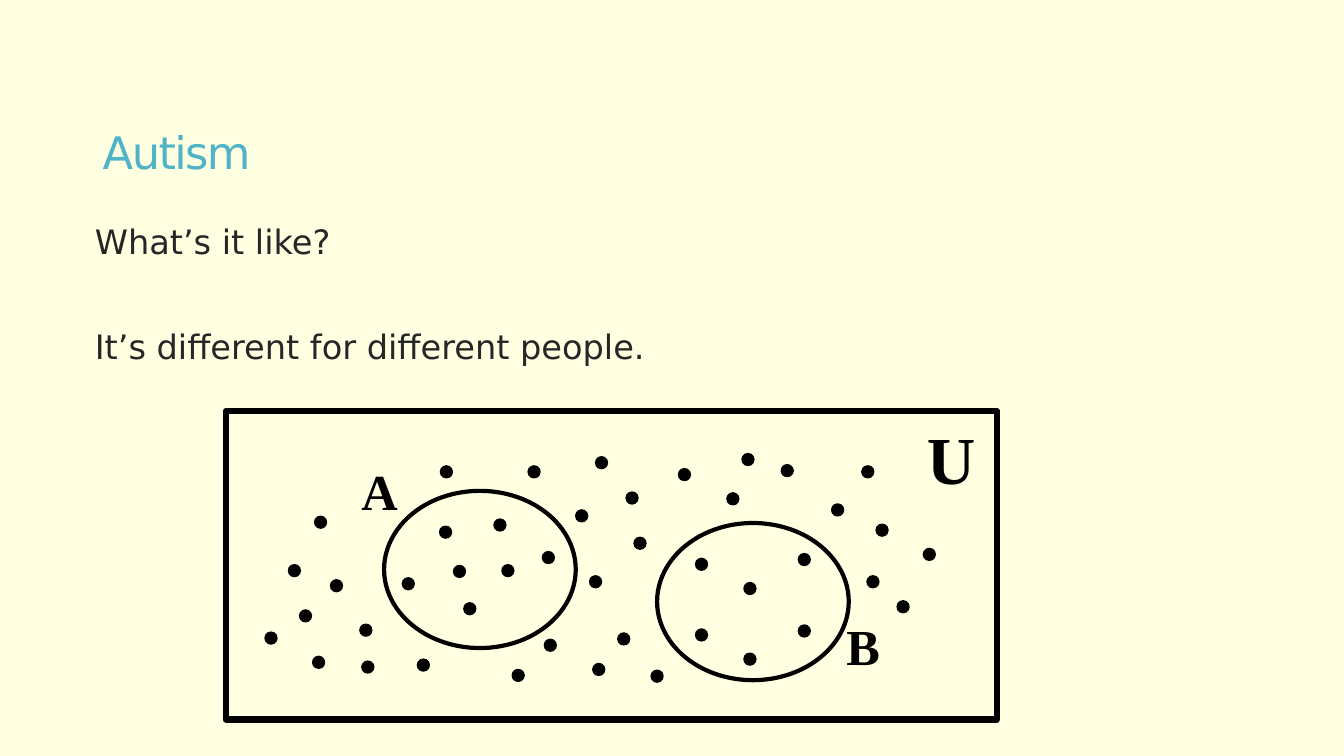
from typing import NamedTuple

from pptx import Presentation
from pptx.dml.color import RGBColor
from pptx.enum.shapes import MSO_SHAPE as Kind
from pptx.enum.text import MSO_ANCHOR as Anchor
from pptx.util import Cm, Pt

CREAM = RGBColor(0xFF, 0xFF, 0xE1)
TEAL = RGBColor(0x50, 0xB4, 0xC8)
GREY = RGBColor(0x26, 0x26, 0x26)
BLACK = RGBColor(0, 0, 0)
SANS = "DejaVu Sans"
SERIF = "Times New Roman"
DOT = 0.3


class Box(NamedTuple):
    left: float
    top: float
    width: float
    height: float


class Style(NamedTuple):
    font: str
    size: int
    color: RGBColor
    bold: bool = False
    track: int = 0  # letter spacing, hundredths of a point


class Label(NamedTuple):
    text: str
    box: Box
    size: int


class Ring(NamedTuple):
    kind: Kind
    box: Box
    weight: float


class Dot(NamedTuple):
    x: float
    y: float


TITLE = Style(SANS, 32, TEAL, track=-120)
BODY = Style(SANS, 24, GREY)

RINGS = [
    Ring(Kind.RECTANGLE, Box(5.69, 10.36, 19.43, 7.77), 4.5),
    Ring(Kind.OVAL, Box(9.68, 12.37, 4.83, 3.96), 3),
    Ring(Kind.OVAL, Box(16.56, 13.18, 4.83, 3.96), 3),
]
LABELS = [
    Label("U", Box(23.11, 10.39, 1.75, 2.31), 48),
    Label("A", Box(8.86, 11.46, 1.45, 1.8), 36),
    Label("B", Box(21.08, 15.37, 1.37, 1.8), 36),
]
# Centres of the dots
IN_A = [
    Dot(11.23, 13.41), Dot(12.6, 13.23), Dot(10.29, 14.71), Dot(11.58, 14.4),
    Dot(12.8, 14.38), Dot(13.82, 14.05), Dot(11.84, 15.34),
]
IN_B = [
    Dot(17.68, 14.22), Dot(18.9, 14.83), Dot(20.27, 14.1),
    Dot(17.68, 16), Dot(18.9, 16.61), Dot(20.27, 15.9),
]
OUTSIDE = [
    Dot(6.83, 16.08), Dot(7.42, 14.38), Dot(7.7, 15.52), Dot(8.03, 16.69),
    Dot(8.08, 13.16), Dot(8.48, 14.76), Dot(9.22, 15.88), Dot(9.27, 16.81),
    Dot(10.67, 16.76), Dot(11.25, 11.89), Dot(13.06, 17.02), Dot(13.46, 11.89),
    Dot(13.87, 16.26), Dot(14.66, 13), Dot(15.01, 14.66), Dot(15.09, 16.87),
    Dot(15.16, 11.66), Dot(15.72, 16.1), Dot(15.93, 12.55), Dot(16.13, 13.69),
    Dot(16.56, 17.04), Dot(17.25, 11.96), Dot(18.47, 12.57), Dot(18.85, 11.58),
    Dot(19.84, 11.86), Dot(21.11, 12.85), Dot(21.87, 11.89), Dot(22, 14.66),
    Dot(22.23, 13.36), Dot(22.76, 15.29), Dot(23.42, 13.97),
]


def place(box: Box) -> list[Cm]:
    return [Cm(side) for side in box]


def add_text(slide, box: Box, lines: list[str], style: Style,
             wrap: bool = True, pitch: float = 1, gap: float = 0):
    """Add a text box; gap is the space in points between its paragraphs."""
    frame = slide.shapes.add_textbox(*place(box)).text_frame
    frame.word_wrap = wrap
    for index, line in enumerate(lines):
        para = frame.add_paragraph() if index else frame.paragraphs[0]
        para.line_spacing = pitch
        if index:
            para.space_before = Pt(gap)
        run = para.add_run()
        run.text = line
        font = run.font
        font.name, font.size, font.bold = style.font, Pt(style.size), style.bold
        font.color.rgb = style.color
        if style.track:
            run._r.get_or_add_rPr().set("spc", str(style.track))
    return frame


def add_form(slide, kind: Kind, box: Box, weight: float, solid: bool) -> None:
    shape = slide.shapes.add_shape(kind, *place(box))
    shape.shadow.inherit = False
    if solid:
        shape.fill.solid()
        shape.fill.fore_color.rgb = BLACK
    else:
        shape.fill.background()
    shape.line.color.rgb = BLACK
    shape.line.width = Pt(weight)


def main() -> None:
    deck = Presentation()
    deck.slide_width, deck.slide_height = Cm(33.87), Cm(19.05)
    slide = deck.slides.add_slide(deck.slide_layouts[6])
    slide.background.fill.solid()
    slide.background.fill.fore_color.rgb = CREAM

    title = add_text(slide, Box(2.34, 2.13, 29.64, 3.58), ["Autism"],
                     TITLE, pitch=0.85)
    title.vertical_anchor = Anchor.MIDDLE
    body = add_text(slide, Box(1.88, 5.59, 29.87, 10.46),
                    ["What’s it like?", "It’s different for different people."],
                    BODY, pitch=0.85, gap=51)
    body.margin_left = Cm(0.51)

    for ring in RINGS:
        add_form(slide, ring.kind, ring.box, ring.weight, solid=False)
    for dot in IN_A + IN_B + OUTSIDE:
        box = Box(dot.x - DOT / 2, dot.y - DOT / 2, DOT, DOT)
        add_form(slide, Kind.OVAL, box, 1, solid=True)
    for label in LABELS:
        style = Style(SERIF, label.size, BLACK, bold=True)
        add_text(slide, label.box, [label.text], style, wrap=False)

    deck.save("out.pptx")


if __name__ == "__main__":
    main()
